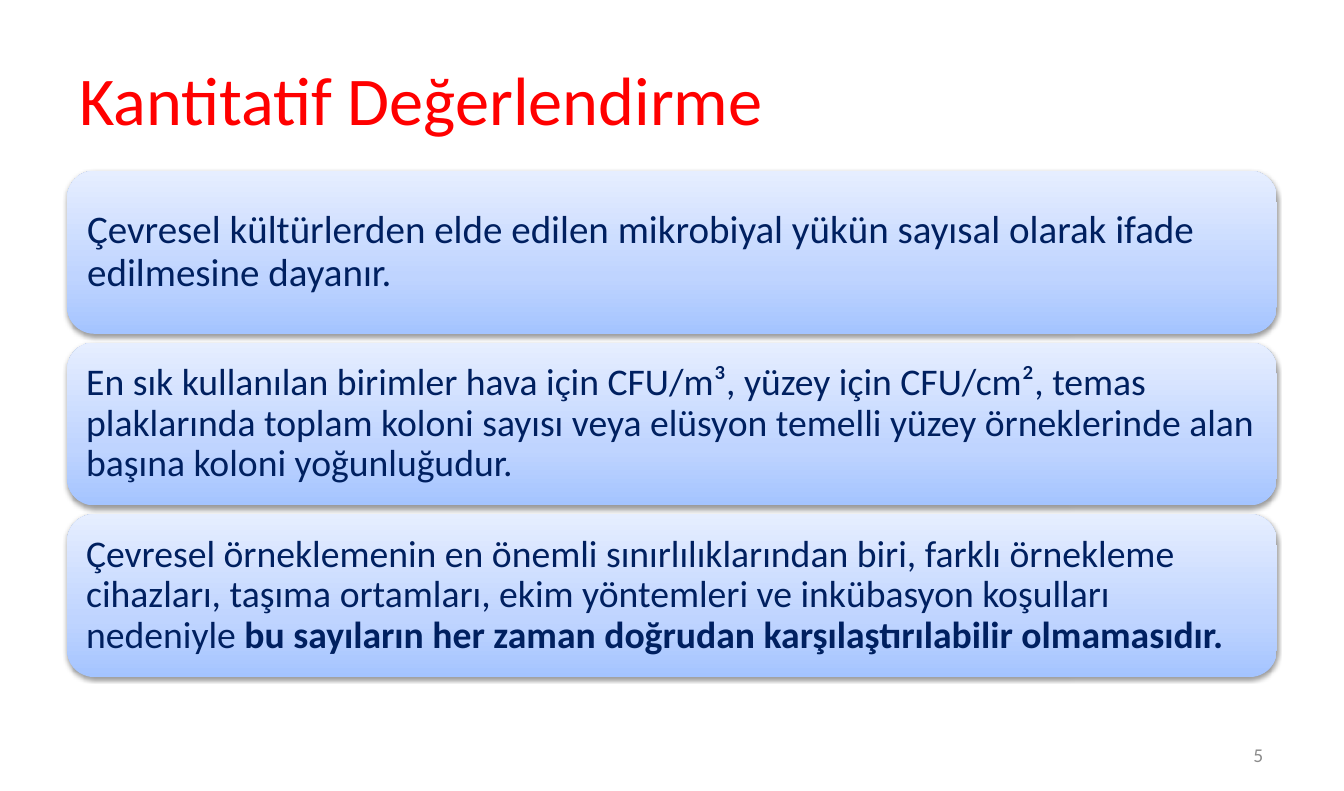
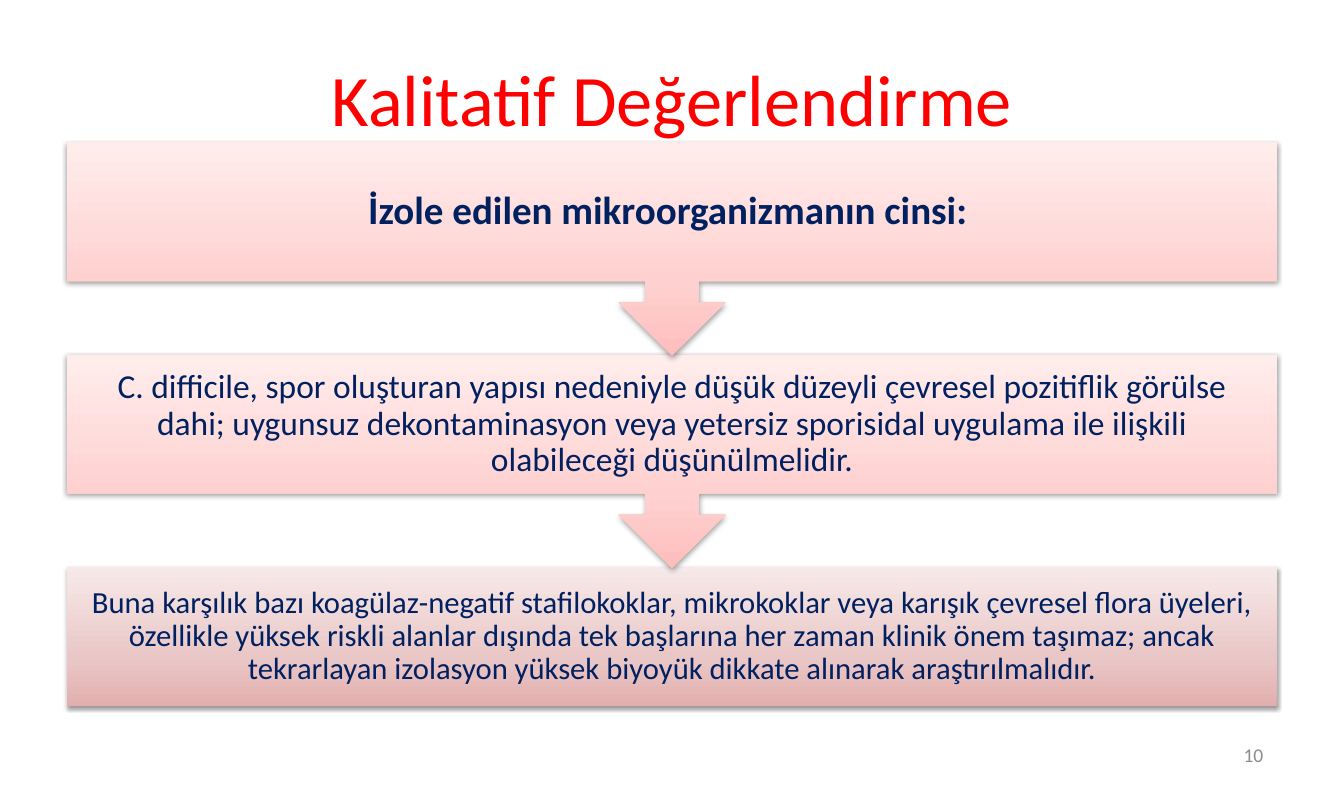
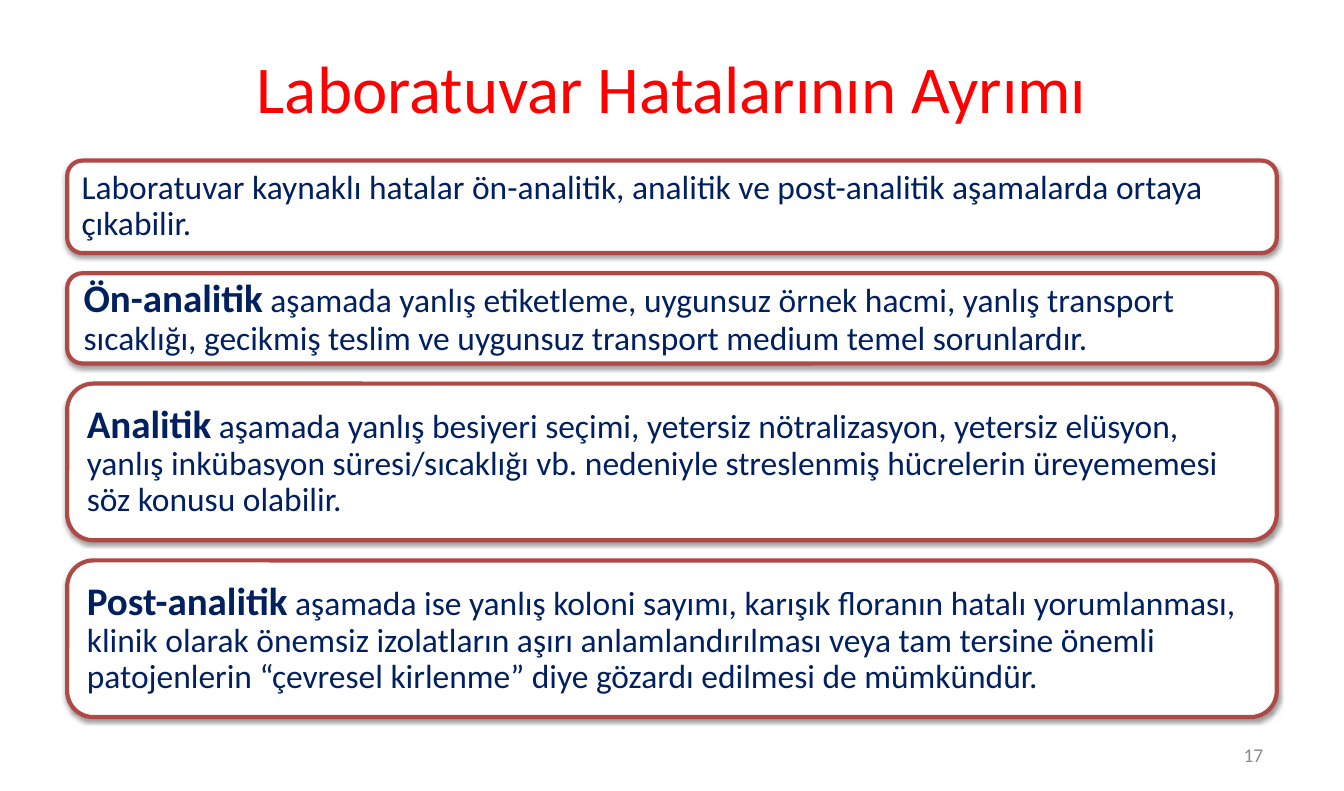
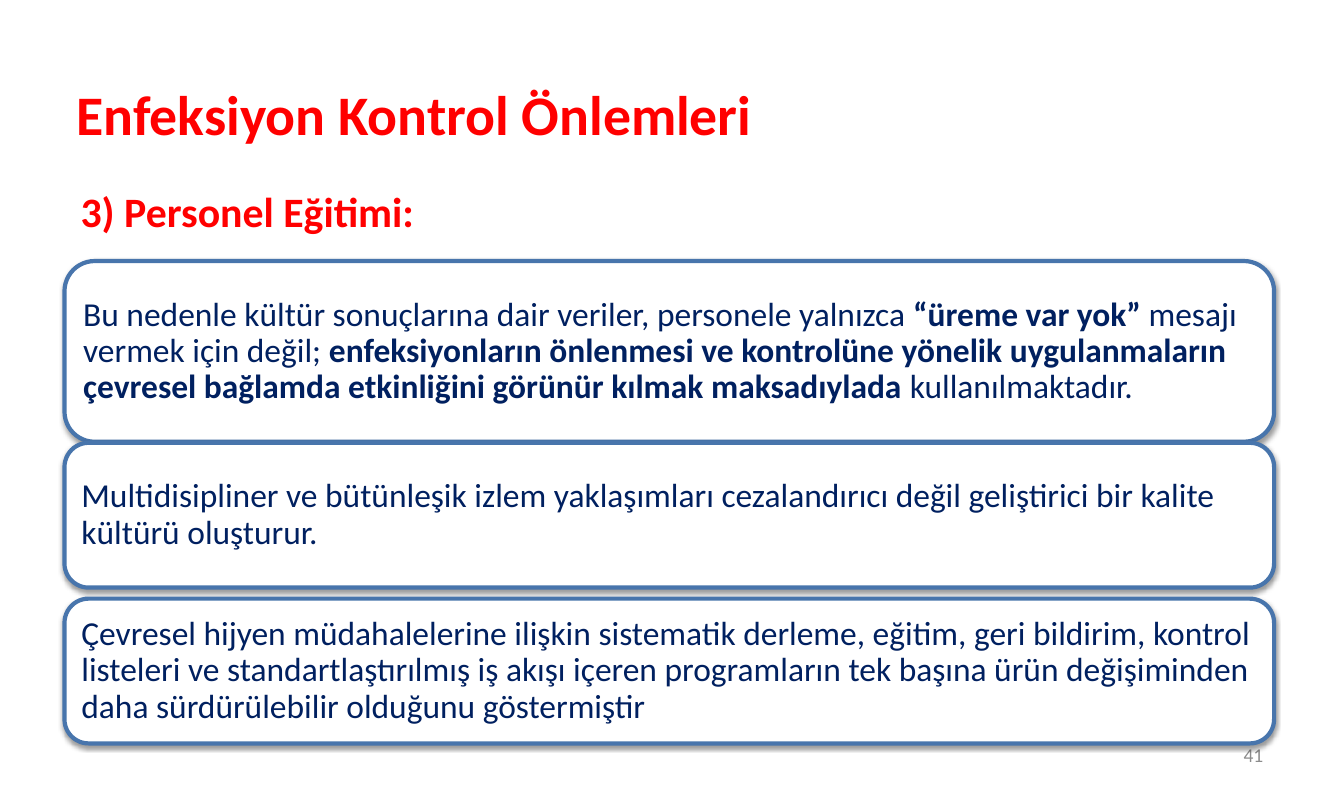
"""Build four slides of stacked message cards on environmental culture results."""
import copy
import dataclasses

import pptx
import pptx.dml.color
import pptx.enum.shapes
import pptx.enum.text
import pptx.oxml
import pptx.oxml.ns
import pptx.util

ALIGN = pptx.enum.text.PP_ALIGN
ANCHOR = pptx.enum.text.MSO_ANCHOR
PRESET = pptx.enum.shapes.MSO_SHAPE
qn = pptx.oxml.ns.qn


@dataclasses.dataclass(frozen=True)
class Theme:
    font: str = "Calibri"
    title: str = "FF0000"
    text: str = "002060"
    number: str = "8C8C8C"
    white: str = "FFFFFF"
    red_line: str = "AE4946"
    blue_line: str = "4875AC"
    blue: tuple = ("A4C4FF", "BFD4FF", "E6EEFF")
    pink: tuple = ("FEBEBD", "FED1D0", "FFEDEC")
    rose: tuple = ("E2AFAE", "EAC7C7", "F7E9E9")
    stops: tuple = (0, 0.35, 1)
    shadow: str = (
        '<a:outerShdw xmlns:a="http://schemas.openxmlformats.org/drawingml/2006/main" '
        'blurRad="40000" dist="20000" dir="5400000" rotWithShape="0">'
        '<a:srgbClr val="000000"><a:alpha val="38000"/></a:srgbClr></a:outerShdw>'
    )
    title_inset: tuple = (0.12, 0.06)
    line_width: int = 3
    number_size: int = 14
    subtitle_size: int = 30
    lead: int = 28
    large: int = 27
    body: int = 24
    small: int = 22


@dataclasses.dataclass(frozen=True)
class Card:
    height: float
    inset: float
    runs: tuple
    gap: float = 0
    preset: int = PRESET.ROUNDED_RECTANGLE
    gradient: tuple = ()
    line: str = ""


@dataclasses.dataclass(frozen=True)
class Page:
    number: str
    title: str
    title_size: int
    cards: tuple
    cards_top: float
    left: float = 5
    title_top: float = 4
    title_height: float = 16.7
    title_align: int = ALIGN.CENTER
    title_bold: bool = False
    subtitle: str = ""
    card_align: int = ALIGN.LEFT
    bottom_card_first: bool = False


theme = Theme()
blue_card = {"height": 20.6, "gap": 1.1, "gradient": theme.blue}
pink_callout = {"height": 27, "gap": -0.15, "preset": PRESET.DOWN_ARROW_CALLOUT, "gradient": theme.pink}
red_card = {"gap": 2.55, "line": theme.red_line}
blue_outline = {"inset": 0.1, "line": theme.blue_line}

pages = (
    Page(
        number="5", title="Kantitatif Değerlendirme", title_size=49, title_align=ALIGN.LEFT, cards_top=21.6,
        cards=(
            Card(inset=0.12, runs=(
                ("Çevresel kültürlerden elde edilen mikrobiyal yükün sayısal olarak ifade edilmesine dayanır.",
                 theme.lead, False),), **blue_card),
            Card(inset=0.11, runs=(
                ("En sık kullanılan birimler hava için CFU/m³, yüzey için CFU/cm², temas plaklarında toplam koloni "
                 "sayısı veya elüsyon temelli yüzey örneklerinde alan başına koloni yoğunluğudur.",
                 theme.large, False),), **blue_card),
            Card(inset=0.11, runs=(
                ("Çevresel örneklemenin en önemli sınırlılıklarından biri, farklı örnekleme cihazları, taşıma "
                 "ortamları, ekim yöntemleri ve inkübasyon koşulları nedeniyle ", theme.large, False),
                ("bu sayıların her zaman doğrudan karşılaştırılabilir olmamasıdır.", theme.large, True),
            ), **blue_card),
        ),
    ),
    Page(
        number="10", title="Kalitatif Değerlendirme", title_size=52, cards_top=18,
        card_align=ALIGN.CENTER, bottom_card_first=True,
        cards=(
            Card(inset=0.22, runs=(
                ("İzole edilen mikroorganizmanın cinsi: ", theme.lead, True),), **pink_callout),
            Card(inset=0.19, runs=(
                ("C. difficile, spor oluşturan yapısı nedeniyle düşük düzeyli çevresel pozitiflik görülse dahi; "
                 "uygunsuz dekontaminasyon veya yetersiz sporisidal uygulama ile ilişkili olabileceği "
                 "düşünülmelidir.", theme.body, False),), **pink_callout),
            Card(height=17.6, inset=0.17, gap=-0.15, preset=PRESET.RECTANGLE, gradient=theme.rose, runs=(
                ("Buna karşılık bazı koagülaz-negatif stafilokoklar, mikrokoklar veya karışık çevresel flora "
                 "üyeleri, özellikle yüksek riskli alanlar dışında tek başlarına her zaman klinik önem taşımaz; "
                 "ancak tekrarlayan izolasyon yüksek biyoyük dikkate alınarak araştırılmalıdır.",
                 theme.small, False),)),
        ),
    ),
    Page(
        number="17", title="Laboratuvar Hatalarının Ayrımı", title_size=48, title_height=14, cards_top=20.3,
        cards=(
            Card(height=11.7, inset=0.1, runs=(
                ("Laboratuvar kaynaklı hatalar ön-analitik, analitik ve post-analitik aşamalarda ortaya çıkabilir.",
                 theme.body, False),), **red_card),
            Card(height=11.4, inset=0.12, runs=(
                ("Ön-analitik", theme.lead, True),
                (" aşamada yanlış etiketleme, uygunsuz örnek hacmi, yanlış transport sıcaklığı, gecikmiş teslim ve "
                 "uygunsuz transport medium temel sorunlardır.", theme.body, False),
            ), **red_card),
            Card(height=19.8, inset=0.12, runs=(
                ("Analitik", theme.lead, True),
                (" aşamada yanlış besiyeri seçimi, yetersiz nötralizasyon, yetersiz elüsyon, yanlış inkübasyon "
                 "süresi/sıcaklığı vb. nedeniyle streslenmiş hücrelerin üreyememesi söz konusu olabilir.",
                 theme.body, False),
            ), **red_card),
            Card(height=19.8, inset=0.12, runs=(
                ("Post-analitik", theme.lead, True),
                (" aşamada ise yanlış koloni sayımı, karışık floranın hatalı yorumlanması, klinik olarak önemsiz "
                 "izolatların aşırı anlamlandırılması veya tam tersine önemli patojenlerin “çevresel kirlenme” "
                 "diye gözardı edilmesi de mümkündür.", theme.body, False),
            ), **red_card),
        ),
    ),
    Page(
        number="41", title="Enfeksiyon Kontrol Önlemleri", title_size=40, title_top=6, title_bold=True,
        title_align=ALIGN.LEFT, left=4.8, subtitle="3) Personel Eğitimi:", cards_top=33,
        cards=(
            Card(height=22.85, runs=(
                ("Bu nedenle kültür sonuçlarına dair veriler, personele yalnızca ", theme.body, False),
                ("“üreme var yok” ", theme.body, True),
                ("mesajı vermek için değil; ", theme.body, False),
                ("enfeksiyonların önlenmesi ve kontrolüne yönelik uygulanmaların çevresel bağlamda etkinliğini "
                 "görünür kılmak maksadıylada ", theme.body, True),
                ("kullanılmaktadır.", theme.body, False),
            ), **blue_outline),
            Card(height=18.3, gap=0.13, runs=(
                ("Multidisipliner ve bütünleşik izlem yaklaşımları cezalandırıcı değil geliştirici bir kalite "
                 "kültürü oluşturur.", theme.body, False),), **blue_outline),
            Card(height=18.3, gap=1.4, runs=(
                ("Çevresel hijyen müdahalelerine ilişkin sistematik derleme, eğitim, geri bildirim, kontrol "
                 "listeleri ve standartlaştırılmış iş akışı içeren programların tek başına ürün değişiminden daha "
                 "sürdürülebilir olduğunu göstermiştir", theme.body, False),), **blue_outline),
        ),
    ),
)

presentation = pptx.Presentation()
presentation.slide_width = pptx.util.Inches(13.39)
presentation.slide_height = pptx.util.Inches(7.88)
blank_layout = presentation.slide_layouts[6]
CARD_WIDTH = 90


def grid(left, top, width, height):
    """Turn percentages of the slide into left, top, width and height."""
    column, row = presentation.slide_width / 100, presentation.slide_height / 100
    return [pptx.util.Emu(round(value)) for value in (left * column, top * row, width * column, height * row)]


def write(shape, runs, color, align, insets, anchor=ANCHOR.MIDDLE, spacing=1.0):
    """Write one paragraph of (text, size, bold) runs into a shape."""
    frame = shape.text_frame
    frame.word_wrap = True
    frame.vertical_anchor = anchor
    frame.margin_left = frame.margin_right = pptx.util.Inches(insets[0])
    frame.margin_top = frame.margin_bottom = pptx.util.Inches(insets[1])
    paragraph = frame.paragraphs[0]
    paragraph.alignment = align
    paragraph.line_spacing = spacing
    for text, size, bold in runs:
        run = paragraph.add_run()
        run.text = text
        run.font.name = theme.font
        run.font.size = pptx.util.Pt(size)
        run.font.bold = bold
        run.font.color.rgb = pptx.dml.color.RGBColor.from_string(color)


for page in pages:
    slide = presentation.slides.add_slide(blank_layout)
    title = slide.shapes.add_textbox(*grid(page.left, page.title_top, CARD_WIDTH, page.title_height))
    write(title, [(page.title, page.title_size, page.title_bold)], theme.title, page.title_align, theme.title_inset)
    number = slide.shapes.add_textbox(*grid(71.6, 92.7, 23.3, 5.3))
    write(number, [(page.number, theme.number_size, False)], theme.number, ALIGN.RIGHT, theme.title_inset)
    if page.subtitle:
        subtitle = slide.shapes.add_textbox(*grid(5.1, 22.7, CARD_WIDTH, 9))
        write(subtitle, [(page.subtitle, theme.subtitle_size, True)], theme.title, ALIGN.LEFT,
              theme.title_inset, ANCHOR.TOP)

    placed_cards = []
    bottom = page.cards_top - page.cards[0].gap
    for card in page.cards:
        placed_cards.append((bottom + card.gap, card))
        bottom += card.gap + card.height
    if page.bottom_card_first:
        placed_cards.reverse()

    for top, card in placed_cards:
        shape = slide.shapes.add_shape(card.preset, *grid(page.left, top, CARD_WIDTH, card.height))
        properties = shape._element.spPr
        if card.gradient:
            shape.fill.gradient()
            shape.fill.gradient_angle = 90
            stop_list = properties.find(".//" + qn("a:gsLst"))
            stop_list.insert(1, copy.deepcopy(stop_list[0]))
            for stop, position, color in zip(shape.fill.gradient_stops, theme.stops, card.gradient):
                stop.position = position
                stop.color.rgb = pptx.dml.color.RGBColor.from_string(color)
            shape.line.fill.background()
        else:
            shape.fill.solid()
            shape.fill.fore_color.rgb = pptx.dml.color.RGBColor.from_string(theme.white)
            shape.line.color.rgb = pptx.dml.color.RGBColor.from_string(card.line)
            shape.line.width = pptx.util.Pt(theme.line_width)
        shape.shadow.inherit = False
        properties.find(qn("a:effectLst")).append(pptx.oxml.parse_xml(theme.shadow))
        write(shape, card.runs, theme.text, page.card_align, (card.inset, card.inset), spacing=0.9)

presentation.save("out.pptx")
